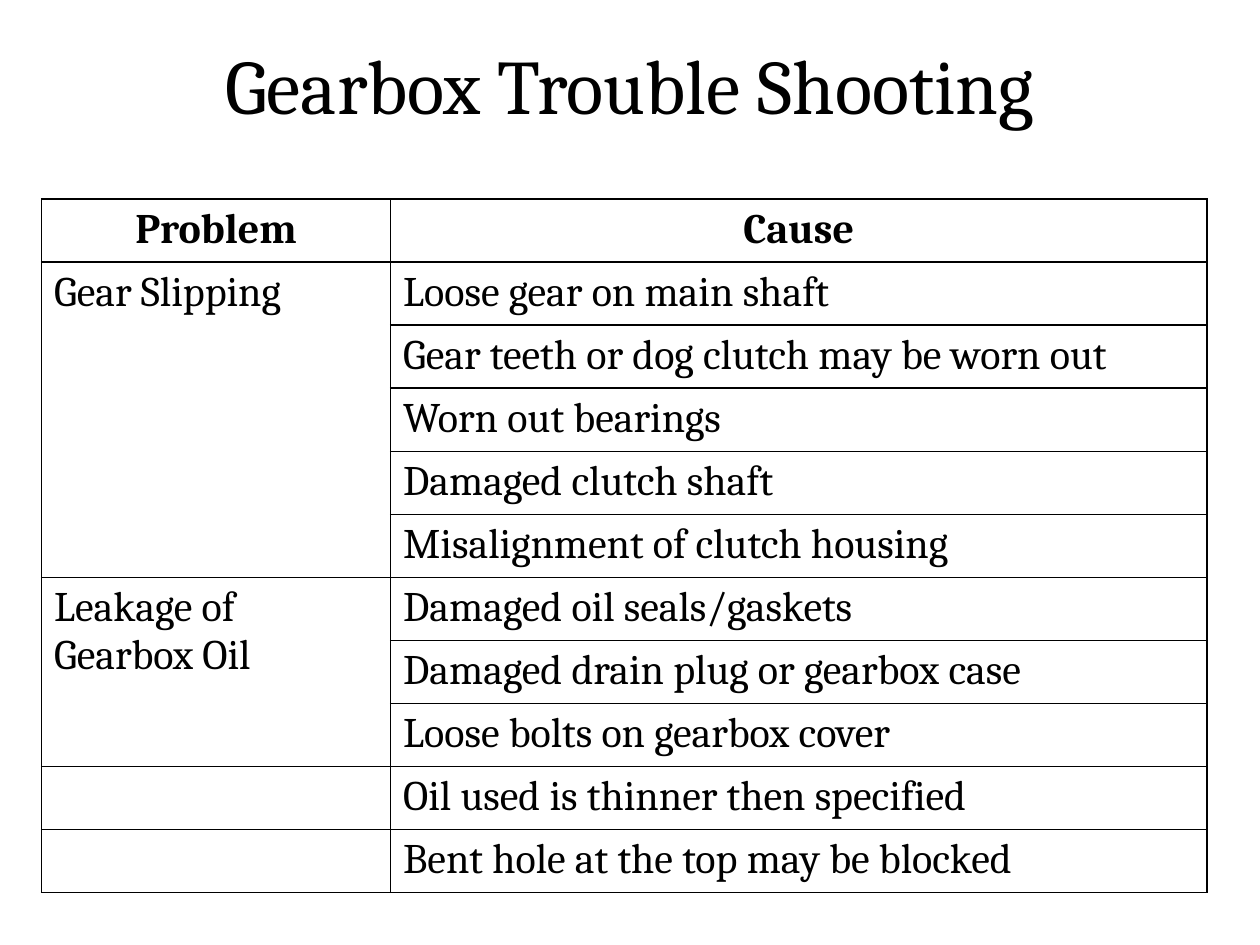
from lxml.etree import SubElement
from pptx import Presentation
from pptx.dml.color import RGBColor
from pptx.enum.text import MSO_ANCHOR as Anchor, PP_ALIGN as Align
from pptx.oxml.ns import qn
from pptx.util import Inches, Pt

COLORS = {"text": "000000", "border": "000000", "background": "FFFFFF"}
FONT = "Cambria"
HEADERS = ("Problem", "Cause")
HEADER_HEIGHT = Inches(0.49)
CAUSE_HEIGHT = Inches(0.33)
PROBLEMS = [
    ("Gear Slipping", [
        "Loose gear on main shaft",
        "Gear teeth or dog clutch may be worn out",
        "Worn out bearings",
        "Damaged clutch shaft",
        "Misalignment of clutch housing",
    ]),
    ("Leakage of Gearbox Oil", [
        "Damaged oil seals/gaskets",
        "Damaged drain plug or gearbox case",
        "Loose bolts on gearbox cover",
    ]),
    ("", ["Oil used is thinner then specified"]),
    ("", ["Bent hole at the top may be blocked"]),
]


def write(frame, text, size, align, bold=False):
    paragraph = frame.paragraphs[0]
    paragraph.text = text
    paragraph.alignment = align
    font = paragraph.font
    font.name, font.size, font.bold = FONT, Pt(size), bold
    font.color.rgb = RGBColor.from_string(COLORS["text"])


def style_cell(cell):
    properties = cell._tc.get_or_add_tcPr()
    for side in ("a:lnL", "a:lnR", "a:lnT", "a:lnB"):
        line = SubElement(properties, qn(side), w=str(Pt(1)))
        fill = SubElement(line, qn("a:solidFill"))
        SubElement(fill, qn("a:srgbClr"), val=COLORS["border"])
    cell.fill.background()


def add_title(slide, left, top, width, height):
    shape = slide.shapes.add_textbox(left, top, width, height)
    frame = shape.text_frame
    frame.word_wrap = True
    frame.vertical_anchor = Anchor.MIDDLE
    write(frame, "Gearbox Trouble Shooting", 44, Align.CENTER)


def add_problem_table(slide, left, top, width, height):
    row_count = 1 + sum(len(causes) for _, causes in PROBLEMS)
    shape = slide.shapes.add_table(row_count, 2, left, top, width, height)
    table = shape.table
    table.horz_banding = False
    table.columns[0].width = Inches(2.77)
    table.columns[1].width = width - table.columns[0].width
    for index, table_row in enumerate(table.rows):
        table_row.height = CAUSE_HEIGHT if index else HEADER_HEIGHT
    shape.height = height

    for cell in table.iter_cells():
        style_cell(cell)
    for column, header in enumerate(HEADERS):
        write(table.cell(0, column).text_frame, header, 24, Align.CENTER, bold=True)

    row = 1
    for problem, causes in PROBLEMS:
        problem_cell = table.cell(row, 0)
        if len(causes) > 1:
            problem_cell.merge(table.cell(row + len(causes) - 1, 0))
        write(problem_cell.text_frame, problem, 24, Align.LEFT)
        for cause in causes:
            write(table.cell(row, 1).text_frame, cause, 24, Align.JUSTIFY)
            row += 1


def main():
    presentation = Presentation()
    presentation.slide_width, presentation.slide_height = Inches(10), Inches(7.5)
    slide = presentation.slides.add_slide(presentation.slide_layouts[6])
    background = slide.background.fill
    background.solid()
    background.fore_color.rgb = RGBColor.from_string(COLORS["background"])
    add_title(slide, Inches(0.5), Inches(0.25), Inches(9), Inches(0.83))
    add_problem_table(slide, Inches(0.33), Inches(1.58), Inches(9.25), Inches(5.5))
    presentation.save("out.pptx")


if __name__ == "__main__":
    main()
